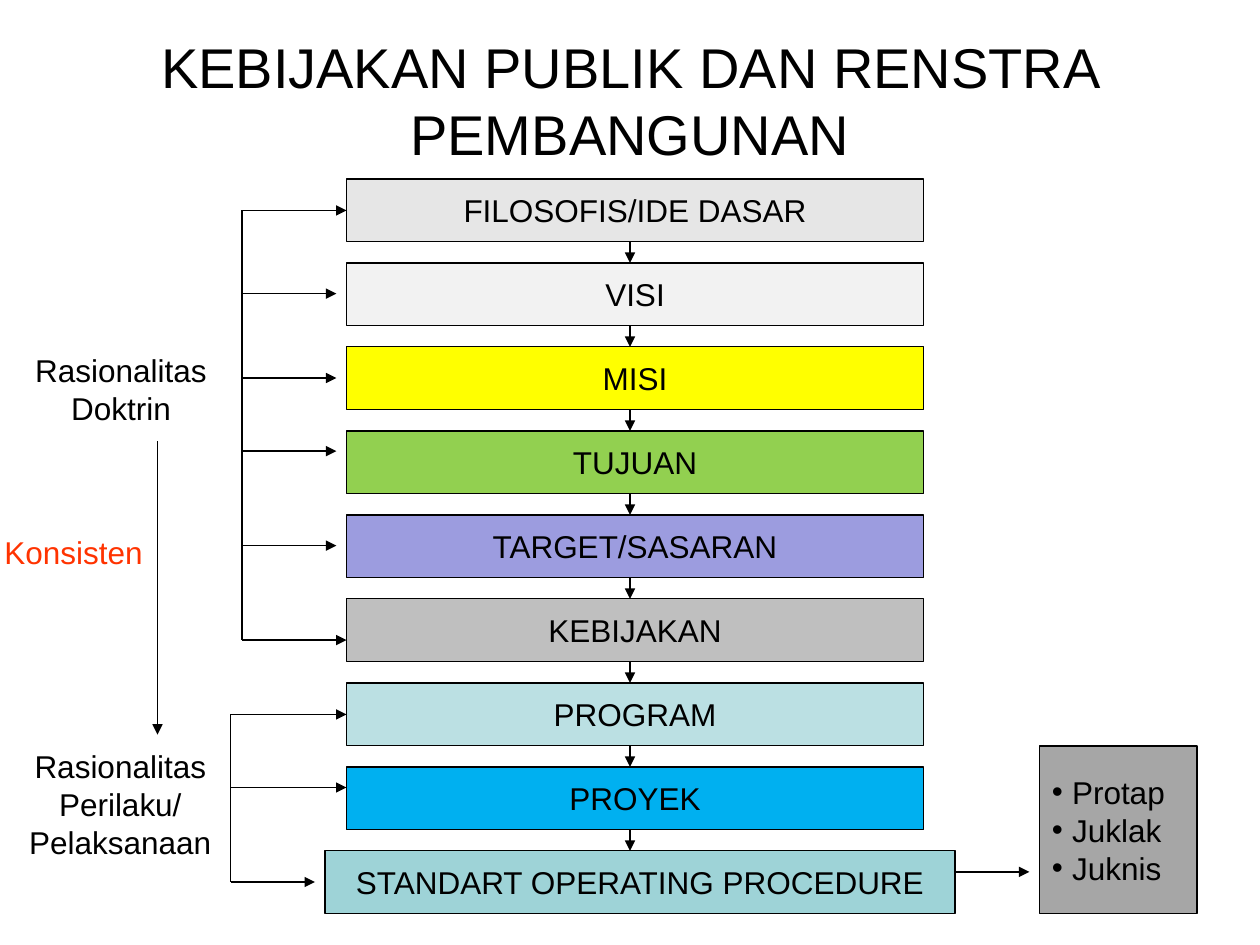
from dataclasses import dataclass

from lxml.etree import SubElement
from pptx import Presentation
from pptx.dml.color import RGBColor
from pptx.enum.shapes import MSO_CONNECTOR, MSO_SHAPE
from pptx.enum.text import MSO_ANCHOR, MSO_AUTO_SIZE, PP_ALIGN
from pptx.oxml.ns import qn
from pptx.util import Inches, Pt


@dataclass(frozen=True)
class Theme:
    font: str = "Arial"
    title_size: int = 32
    body_size: int = 18
    line_width: float = 0.75
    ink: str = "000000"
    accent: str = "FF3300"
    list_fill: str = "A6A6A6"
    stage_fills: tuple = (
        "E6E6E6", "F2F2F2", "FFFF00", "92D050", "9C9CDF",
        "BFBFBF", "BBE0E3", "00B0F0", "9ED3D7",
    )


class SlideBuilder:
    def __init__(self, slide, theme):
        self.slide = slide
        self.theme = theme

    def set_text(self, shape, text, size, color, align=PP_ALIGN.CENTER, wrap=False):
        frame = shape.text_frame
        frame.text = text
        frame.word_wrap = wrap
        frame.auto_size = MSO_AUTO_SIZE.NONE
        frame.vertical_anchor = MSO_ANCHOR.MIDDLE
        for paragraph in frame.paragraphs:
            paragraph.alignment = align
            for run in paragraph.runs:
                run.font.name = self.theme.font
                run.font.size = Pt(size)
                run.font.color.rgb = RGBColor.from_string(color)

    def title(self, text, left, top, width, height):
        shape = self.slide.shapes.title
        shape.left, shape.top = Inches(left), Inches(top)
        shape.width, shape.height = Inches(width), Inches(height)
        self.set_text(shape, text, self.theme.title_size, self.theme.ink, wrap=True)

    def box(self, text, fill, left, top, width, height, align=PP_ALIGN.CENTER, wrap=False):
        shape = self.slide.shapes.add_shape(
            MSO_SHAPE.RECTANGLE, Inches(left), Inches(top), Inches(width), Inches(height)
        )
        shape.shadow.inherit = False
        shape.fill.solid()
        shape.fill.fore_color.rgb = RGBColor.from_string(fill)
        shape.line.color.rgb = RGBColor.from_string(self.theme.ink)
        shape.line.width = Pt(self.theme.line_width)
        self.set_text(shape, text, self.theme.body_size, self.theme.ink, align, wrap)
        return shape

    def bullet_box(self, items, fill, left, top, width, height):
        shape = self.box("\n".join(items), fill, left, top, width, height, PP_ALIGN.LEFT, True)
        indent = Inches(0.16)
        for paragraph in shape.text_frame.paragraphs:
            properties = paragraph._p.get_or_add_pPr()
            properties.set("marL", str(indent))
            properties.set("indent", str(-indent))
            SubElement(properties, qn("a:buFont"), typeface=self.theme.font)
            SubElement(properties, qn("a:buChar"), char="•")

    def label(self, text, color, left, top, width, height):
        shape = self.slide.shapes.add_textbox(
            Inches(left), Inches(top), Inches(width), Inches(height)
        )
        self.set_text(shape, text, self.theme.body_size, color)

    def line(self, start, end, arrow=True, target=None):
        connector = self.slide.shapes.add_connector(
            MSO_CONNECTOR.STRAIGHT, *(Inches(value) for value in (*start, *end))
        )
        connector.line.color.rgb = RGBColor.from_string(self.theme.ink)
        connector.line.width = Pt(self.theme.line_width)
        if arrow:
            SubElement(connector.line._get_or_add_ln(), qn("a:tailEnd"), type="triangle")
        SubElement(connector._element.spPr, qn("a:effectLst"))
        if target is not None:
            connector.end_connect(target, 1)

    def bracket(self, spine, branches):
        self.line((spine, branches[0][1]), (spine, branches[-1][1]), arrow=False)
        for end, height, target in branches:
            self.line((spine, height), (end, height), target=target)


def main():
    theme = Theme()
    presentation = Presentation()
    presentation.slide_width, presentation.slide_height = Inches(10), Inches(7.5)
    slide = presentation.slides.add_slide(presentation.slide_layouts[5])
    builder = SlideBuilder(slide, theme)
    builder.title("KEBIJAKAN PUBLIK DAN RENSTRA PEMBANGUNAN", 0.5, 0.33, 9, 0.92)

    names = (
        "FILOSOFIS/IDE DASAR", "VISI", "MISI", "TUJUAN", "TARGET/SASARAN",
        "KEBIJAKAN", "PROGRAM", "PROYEK", "STANDART OPERATING PROCEDURE",
    )
    first_top, pitch, stage_height = 1.42, 2 / 3, 0.5
    stages = []
    for index, (name, fill) in enumerate(zip(names, theme.stage_fills)):
        top = first_top + index * pitch
        left, width = (2.58, 5) if name == names[-1] else (2.75, 4.58)
        stages.append(builder.box(name, fill, left, top, width, stage_height))
        if index:
            builder.line((5, top - pitch + stage_height), (5, top))

    builder.bullet_box(("Protap", "Juklak", "Juknis"), theme.list_fill, 8.25, 5.92, 1.25, 1.33)
    builder.line((7.58, 6.92), (8.17, 6.92))

    builder.bracket(1.92, (
        (2.75, 1.67, stages[0]), (2.67, 2.33, None), (2.67, 3, None),
        (2.67, 3.58, None), (2.67, 4.33, None), (2.75, 5.08, None),
    ))
    builder.bracket(1.83, ((2.75, 5.67, stages[6]), (2.75, 6.25, None), (2.5, 7, None)))

    builder.label("Rasionalitas\nDoktrin", theme.ink, 0.17, 2.25, 1.58, 1.67)
    builder.label("Rasionalitas\nPerilaku/\nPelaksanaan", theme.ink, 0.33, 5.92, 1.25, 0.92)
    builder.line((1.25, 3.5), (1.25, 5.83))
    builder.label("Konsisten", theme.accent, 0, 4.17, 1.17, 0.42)

    presentation.save("out.pptx")


if __name__ == "__main__":
    main()
